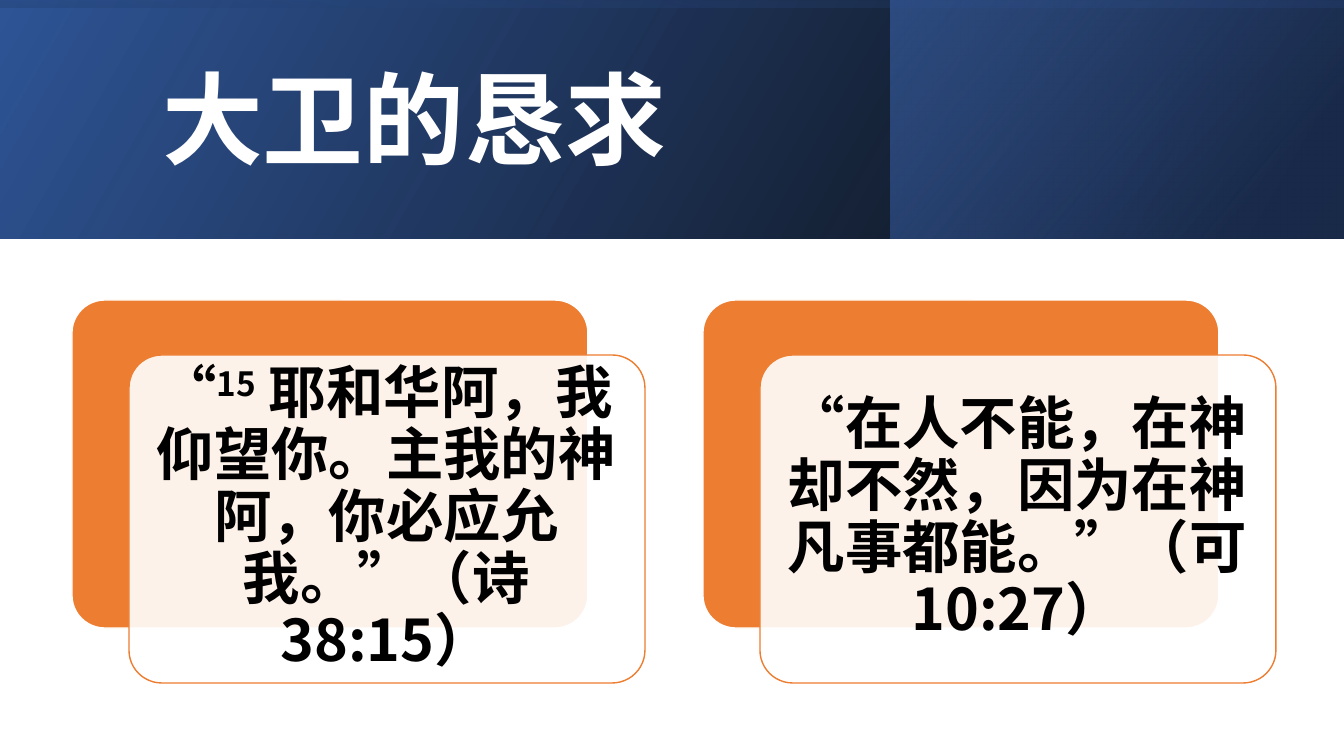
from pptx import Presentation
from pptx.dml.color import RGBColor
from pptx.enum.shapes import MSO_SHAPE
from pptx.enum.text import MSO_ANCHOR, PP_ALIGN
from pptx.oxml.ns import qn
from pptx.util import Pt
from lxml import etree

RECTANGLE = MSO_SHAPE.RECTANGLE
ROUNDED = MSO_SHAPE.ROUNDED_RECTANGLE
MIDDLE = MSO_ANCHOR.MIDDLE
CENTER = PP_ALIGN.CENTER

PX = 914400 / 100.8
FONT = "Noto Sans CJK SC"
COLORS = {
    "white": "FFFFFF",
    "black": "000000",
    "orange": "ED7D31",
    "blue": "2F5597",
    "navy": "203864",
    "sky": "4472C4",
}


def set_alpha(color_element, percent):
    etree.SubElement(color_element, qn("a:alpha")).set("val", str(percent * 1000))


def add_run(paragraph, text, size, color):
    run = paragraph.add_run()
    run.text = text
    run.font.size = Pt(size)
    run.font.bold = True
    run.font.name = FONT
    run.font.color.rgb = RGBColor.from_string(COLORS[color])
    properties = run.font._element
    etree.SubElement(properties, qn("a:ea")).set("typeface", FONT)
    return properties


presentation = Presentation()
presentation.slide_width = round(1344 * PX)
presentation.slide_height = round(756 * PX)
slide = presentation.slides.add_slide(presentation.slide_layouts[5])
shapes = slide.shapes

header_bands = [
    ((0, 0, 1344, 239), 0, 330, [(0, "black", 96), (100, "blue", 100)]),
    ((891, 0, 452, 239), 0, 320, [(19, "navy", 68), (100, "sky", 48)]),
    ((552, -552, 239, 1344), 270, 350, [(23, "blue", 16), (99, "black", 45)]),
]
for box, rotation, angle, stops in header_bands:
    band = shapes.add_shape(RECTANGLE, *[round(value * PX) for value in box])
    band.shadow.inherit = False
    band.line.fill.background()
    band.rotation = rotation
    band._element.spPr.find(qn("a:xfrm")).set("flipH", "1")
    band.fill.gradient()
    band.fill.gradient_angle = 360 - angle
    for stop, (position, color, alpha) in zip(band.fill.gradient_stops, stops):
        stop.position = position / 100
        stop.color.rgb = RGBColor.from_string(COLORS[color])
    color_elements = band._element.spPr.findall(".//" + qn("a:srgbClr"))
    for color_element, (position, color, alpha) in zip(color_elements, stops):
        set_alpha(color_element, alpha)

title = shapes.title
title.left, title.top, title.width, title.height = [
    round(value * PX) for value in (152, 38, 1072, 173)
]
title.text_frame.vertical_anchor = MIDDLE
title_paragraph = title.text_frame.paragraphs[0]
title_paragraph.alignment = PP_ALIGN.LEFT
title_paragraph.line_spacing = 0.9
add_run(title_paragraph, "大卫的恳求", 72, "white")
shapes._spTree.append(title._element)

verses = [
    [("“", 0), ("15", 30), (" 耶和华阿，我仰望你。主我的神阿，你必应允我。”（诗38:15）", 0)],
    [("“在人不能，在神却不然，因为在神凡事都能。”（可10:27）", 0)],
]
card_layers = [(0, "orange", "white", 100), (1, "white", "orange", 90)]
for column, verse in enumerate(verses):
    card_left = 72 + 631 * column
    for layer, fill, line, alpha in card_layers:
        card = shapes.add_shape(
            ROUNDED,
            round((card_left + 57 * layer) * PX),
            round((300 + 55 * layer) * PX),
            round(516 * PX),
            round(328 * PX),
        )
        card.adjustments[0] = 0.1
        card.shadow.inherit = False
        card.fill.solid()
        card.fill.fore_color.rgb = RGBColor.from_string(COLORS[fill])
        set_alpha(card._element.spPr.find(".//" + qn("a:srgbClr")), alpha)
        card.line.color.rgb = RGBColor.from_string(COLORS[line])
        card.line.width = Pt(1)

    verse_box = shapes.add_textbox(
        round((card_left + 66) * PX), round(365 * PX), round(497 * PX), round(308 * PX)
    )
    frame = verse_box.text_frame
    frame.word_wrap = True
    frame.vertical_anchor = MIDDLE
    frame.margin_left = frame.margin_right = round(17 * PX)
    frame.margin_top = frame.margin_bottom = round(17 * PX)
    paragraph = frame.paragraphs[0]
    paragraph.alignment = CENTER
    paragraph.line_spacing = 0.9
    paragraph.space_after = Pt(14)
    for text, baseline in verse:
        properties = add_run(paragraph, text, 41, "black")
        properties.set("baseline", str(baseline * 1000))

presentation.save("out.pptx")
